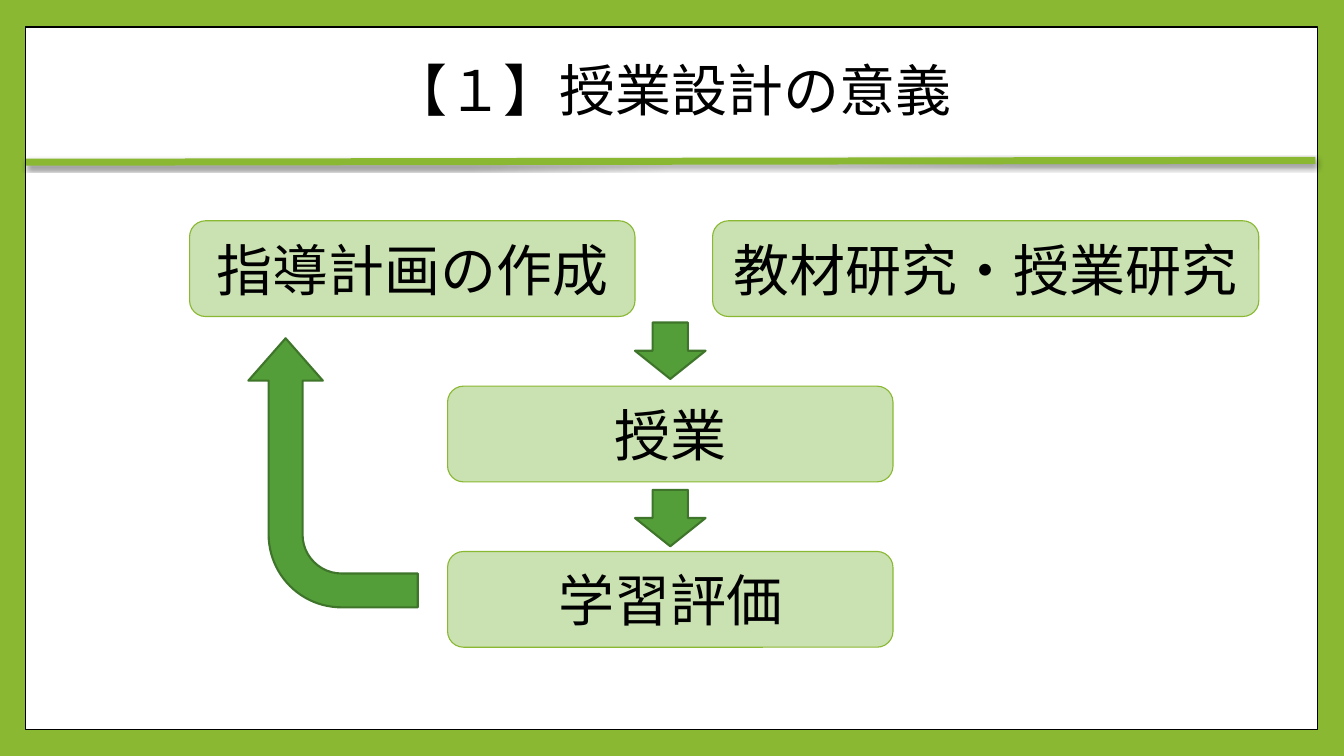
from lxml import etree
from pptx import Presentation
from pptx.dml.color import RGBColor
from pptx.enum import shapes as kinds, text as align
from pptx.oxml import ns
from pptx.util import Pt

LIME = RGBColor(0x8A, 0xB8, 0x33)
PALE = RGBColor(0xCA, 0xE1, 0xB1)
GREEN = RGBColor(0x54, 0x9E, 0x39)
DARK_GREEN = RGBColor(0x3E, 0x75, 0x2A)
WHITE = RGBColor(0xFF, 0xFF, 0xFF)
BLACK = RGBColor(0, 0, 0)

HEADING = "【１】授業設計の意義"
STEPS = [
    ("指導計画の作成", 135.4, 0, 318.2),
    ("授業", 319.7, 1, 318.2),
    ("教材研究・授業研究", 509, 0, 390.2),
    ("学習評価", 319.7, 2, 318.2),
]
STEP_TOP, STEP_PITCH, STEP_HEIGHT = 157.7, 118.1, 68.4
DOWN_TOPS = [230.4, 349.9]
DOWN_LEFT, DOWN_WIDTH, DOWN_HEIGHT = 453.6, 50.4, 40.3
FEEDBACK_BOX = (141.8, 277.2, 192.2, 121)
FEEDBACK_BENDS = [0.2, 0.22, 0.25, 0.43]

KIND = kinds.MSO_SHAPE


def add_block(slide, kind, box, fill, line, width):
    block = slide.shapes.add_shape(kind, *map(Pt, box))
    block.shadow.inherit = False
    block.fill.solid()
    block.fill.fore_color.rgb = fill
    block.line.color.rgb = line
    block.line.width = Pt(width)
    return block


def write(holder, words, font_name):
    frame = holder.text_frame
    frame.text = words
    frame.word_wrap = True
    frame.vertical_anchor = align.MSO_ANCHOR.MIDDLE
    paragraph = frame.paragraphs[0]
    paragraph.alignment = align.PP_ALIGN.CENTER
    font = paragraph.runs[0].font
    font.name, font.size = font_name, Pt(40)
    font.color.rgb = BLACK
    return paragraph


def add_rule(slide):
    rule = slide.shapes.add_connector(
        kinds.MSO_CONNECTOR.STRAIGHT, Pt(18.7), Pt(115.9), Pt(939.6), Pt(114.5))
    rule.line.color.rgb = LIME
    rule.line.width = Pt(5)
    effects = etree.SubElement(rule._element.spPr, ns.qn("a:effectLst"))
    shadow = etree.SubElement(
        effects, ns.qn("a:outerShdw"), blurRad=str(Pt(3)), dist=str(Pt(2)),
        dir="5400000", rotWithShape="0")
    tint = etree.SubElement(shadow, ns.qn("a:srgbClr"), val=str(BLACK))
    etree.SubElement(tint, ns.qn("a:alpha"), val="45000")


def main():
    deck = Presentation()
    deck.slide_width, deck.slide_height = Pt(960), Pt(540)
    slide = deck.slides.add_slide(deck.slide_layouts[5])
    slide.background.fill.solid()
    slide.background.fill.fore_color.rgb = LIME

    add_block(slide, KIND.RECTANGLE, (18, 19.4, 923, 501.8), WHITE, BLACK, 1)
    add_rule(slide)

    heading = slide.shapes.title
    heading.left, heading.top, heading.width, heading.height = map(
        Pt, (18.7, 25.9, 921.6, 82.1))
    write(heading, HEADING, "Karla").line_spacing = 0.9
    slide.shapes._spTree.append(heading._element)

    for words, left, row, width in STEPS:
        box = (left, STEP_TOP + row * STEP_PITCH, width, STEP_HEIGHT)
        step = add_block(slide, KIND.ROUNDED_RECTANGLE, box, PALE, LIME, 0.79)
        write(step, words, "Arial")

    for top in DOWN_TOPS:
        box = (DOWN_LEFT, top, DOWN_WIDTH, DOWN_HEIGHT)
        add_block(slide, KIND.DOWN_ARROW, box, GREEN, DARK_GREEN, 1.5)

    feedback = add_block(slide, KIND.BENT_ARROW, FEEDBACK_BOX, GREEN, DARK_GREEN, 1.5)
    feedback.rotation = 270
    for index, bend in enumerate(FEEDBACK_BENDS):
        feedback.adjustments[index] = bend

    deck.save("out.pptx")


if __name__ == "__main__":
    main()
